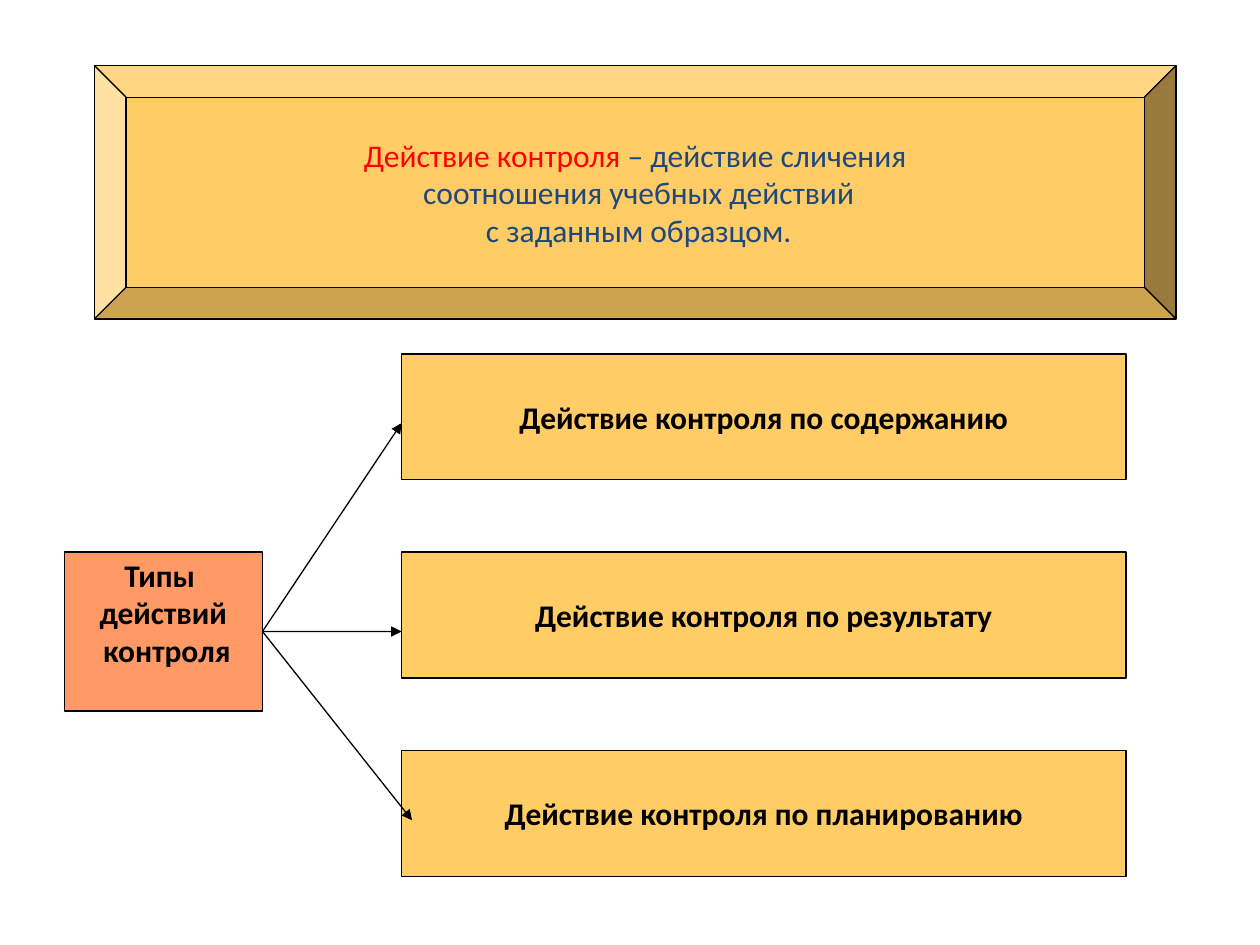
from lxml import etree
from pptx import Presentation
from pptx.dml.color import RGBColor
from pptx.enum import shapes, text
from pptx.oxml.ns import qn
from pptx.util import Pt

BLACK, RED, NAVY = "000000", "FF0000", "1F497D"
YELLOW, ORANGE = "FFCC66", "FF9966"


def color(hex_value):
    return RGBColor.from_string(hex_value)


def add_box(slide, preset, box, fill, paragraphs, bold=True):
    """Outlined box; each paragraph is a list of (words, colour) runs."""
    panel = slide.shapes.add_shape(preset, *map(Pt, box))
    panel.shadow.inherit = False
    panel.fill.solid()
    panel.fill.fore_color.rgb = color(fill)
    panel.line.color.rgb = color(BLACK)
    panel.line.width = Pt(0.75)
    frame = panel.text_frame
    frame.word_wrap = False
    frame.vertical_anchor = text.MSO_ANCHOR.MIDDLE
    for i, runs in enumerate(paragraphs):
        paragraph = frame.paragraphs[0] if i == 0 else frame.add_paragraph()
        paragraph.alignment = text.PP_ALIGN.CENTER
        paragraph.font.name = "Calibri"
        paragraph.font.size = Pt(18)
        paragraph.font.bold = bold
        for words, hex_value in runs:
            run = paragraph.add_run()
            run.text = words
            run.font.color.rgb = color(hex_value)
    return panel


def add_arrow(slide, source, end):
    """Arrow from the middle of the source's right side to a point."""
    x, y = map(Pt, end)
    arrow = slide.shapes.add_connector(
        shapes.MSO_CONNECTOR.STRAIGHT, source.left + source.width,
        source.top + source.height // 2, x, y)
    arrow.begin_connect(source, 3)
    arrow.line.color.rgb = color(BLACK)
    arrow.line.width = Pt(0.75)
    etree.SubElement(arrow.line._get_or_add_ln(), qn("a:tailEnd"), type="triangle")
    etree.SubElement(arrow._element.spPr, qn("a:effectLst"))


def add_definition(slide, box):
    add_box(slide, shapes.MSO_SHAPE.BEVEL, box, YELLOW, [
        [("Действие контроля", RED), (" – действие сличения", NAVY)],
        [(" соотношения учебных действий", NAVY)],
        [(" с заданным образцом.", NAVY)],
    ], bold=False)


def add_control_types(slide, box):
    left, top, width, height = box
    rect = shapes.MSO_SHAPE.RECTANGLE

    # Types of control, evenly spaced down the right side
    type_width, type_height = 414, 72
    type_left = left + width - type_width
    pitch = (height - type_height) / 2
    for row, basis in enumerate(("содержанию", "результату", "планированию")):
        add_box(slide, rect,
                (type_left, top + row * pitch, type_width, type_height),
                YELLOW, [[(f"Действие контроля по {basis}", BLACK)]])

    # Root box, level with the second type; its text sits above centre
    root = add_box(slide, rect, (left, top + pitch, 113.25, 90.75), ORANGE,
                   [[(line, BLACK)] for line in ("Типы ", "действий", " контроля")])
    root.text_frame.margin_bottom = Pt(25.5)

    # Arrows to the types
    for dx, dy in ((0, 39.5), (0, pitch + 45.38), (6, 2 * pitch + 40)):
        add_arrow(slide, root, (type_left + dx, top + dy))


def main():
    prs = Presentation()
    prs.slide_width, prs.slide_height = Pt(720), Pt(540)
    slide = prs.slides.add_slide(prs.slide_layouts[6])
    add_definition(slide, (54, 37.5, 618, 144.75))
    add_control_types(slide, (36.75, 202.25, 606.75, 298.5))
    prs.save("out.pptx")


if __name__ == "__main__":
    main()
